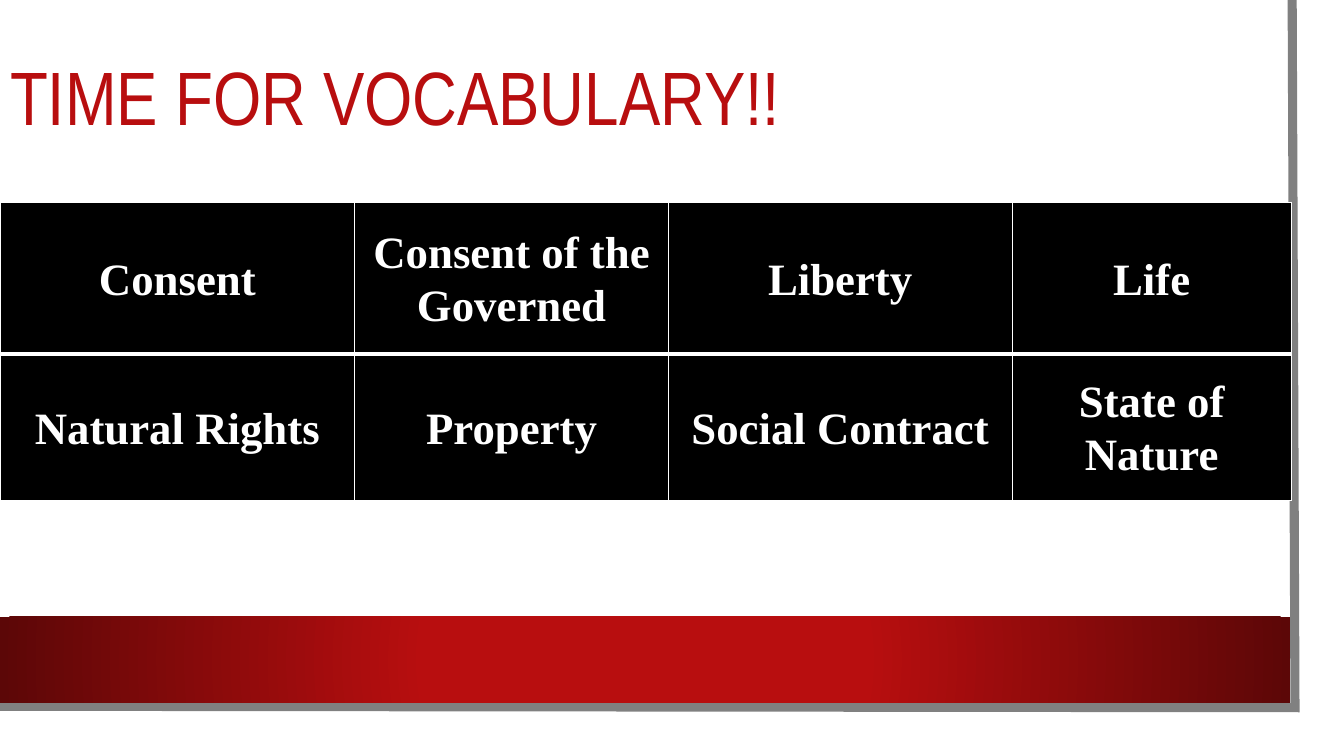
from dataclasses import dataclass
from itertools import product

from lxml import etree
from pptx import Presentation
from pptx import util as u
from pptx.dml import color
from pptx.enum import shapes, text
from pptx.oxml import ns, parse_xml

Pt = u.Pt


@dataclass(frozen=True)
class Theme:
    red: str = "B80E0F"
    dark_red: str = "5C0707"
    white: str = "FFFFFF"
    black: str = "000000"
    grey: str = "808080"
    title_font: str = "Arial Narrow"
    term_font: str = "Times New Roman"
    title_size: float = 54
    term_size: float = 32
    frame_width: float = 6.5
    rule: float = 1
    header_rule: float = 3


THEME = Theme()
TERMS = [
    ["Consent", "Consent of the Governed", "Liberty", "Life"],
    ["Natural Rights", "Property", "Social Contract", "State of Nature"],
]
COLUMN_WIDTHS = [253.5, 224, 245.5, 199.5]
ROW_HEIGHTS = [108.5, 104.5]


def rgb(value):
    return color.RGBColor.from_string(value)


def apply(target, formats):
    for name, value in formats.items():
        setattr(target, name, value)


def style_text(paragraph, ink, paragraph_formats, font_formats):
    apply(paragraph, paragraph_formats)
    apply(paragraph.font, font_formats)
    paragraph.font.color.rgb = rgb(ink)


def add_panel(slide, box):
    panel = slide.shapes.add_shape(shapes.MSO_SHAPE.RECTANGLE, *map(Pt, box))
    panel.shadow.inherit = False
    panel.line.fill.background()
    panel.fill.solid()
    panel.fill.fore_color.rgb = rgb(THEME.white)
    return panel


def add_frame(slide, box):
    left, top, width, height = box
    right, bottom = left + width, top + height
    builder = slide.shapes.build_freeform(Pt(right - 2), Pt(top))
    builder.add_line_segments(
        [(Pt(right), Pt(bottom)), (Pt(left), Pt(bottom - 1))], close=False
    )
    frame = builder.convert_to_shape()
    frame.shadow.inherit = False
    frame.fill.background()
    frame.line.color.rgb = rgb(THEME.grey)
    frame.line.width = Pt(THEME.frame_width)
    outline = frame.element.spPr.find(ns.qn("a:ln"))
    etree.SubElement(outline, ns.qn("a:miter"), lim="800000")


def add_ribbon(slide, box):
    ribbon = add_panel(slide, box)
    stops = "".join(
        f'<a:gs pos="{share * 1000}"><a:srgbClr val="{shade}"/></a:gs>'
        for share, shade in [(34, THEME.red), (100, THEME.dark_red)]
    )
    gradient = parse_xml(
        f'<a:gradFill {ns.nsdecls("a")} rotWithShape="1"><a:gsLst>{stops}</a:gsLst>'
        '<a:path path="circle"><a:fillToRect l="50000" t="50000" r="50000" b="50000"/>'
        "</a:path></a:gradFill>"
    )
    properties = ribbon.element.spPr
    properties.replace(properties.find(ns.qn("a:solidFill")), gradient)


def place_title(slide, box, words):
    title = slide.shapes.title
    apply(title, dict(zip(("left", "top", "width", "height"), map(Pt, box))))
    slide.shapes.element.append(title.element)
    frame = title.text_frame
    frame.text = words
    apply(frame, {
        "vertical_anchor": text.MSO_ANCHOR.MIDDLE,
        "word_wrap": True,
        "auto_size": text.MSO_AUTO_SIZE.NONE,
    })
    style_text(
        frame.paragraphs[0], THEME.red,
        {"alignment": text.PP_ALIGN.LEFT, "line_spacing": 0.9},
        {"name": THEME.title_font, "size": Pt(THEME.title_size), "bold": False},
    )


def add_borders(cell, widths):
    properties = cell._tc.get_or_add_tcPr()
    for position, (side, width) in enumerate(widths.items()):
        properties.insert(position, parse_xml(
            f'<a:{side} {ns.nsdecls("a")} w="{Pt(width)}"><a:solidFill>'
            f'<a:srgbClr val="{THEME.white}"/></a:solidFill></a:{side}>'
        ))


def add_vocabulary(slide, box):
    rows, columns = len(TERMS), len(TERMS[0])
    vocabulary = slide.shapes.add_table(rows, columns, *map(Pt, box)).table
    for column, width in zip(vocabulary.columns, COLUMN_WIDTHS):
        column.width = Pt(width)
    for row, height in zip(vocabulary.rows, ROW_HEIGHTS):
        row.height = Pt(height)
    for row, column in product(range(rows), range(columns)):
        cell = vocabulary.cell(row, column)
        cell.text = TERMS[row][column]
        apply(cell, {
            "vertical_anchor": text.MSO_ANCHOR.MIDDLE,
            "margin_left": Pt(5), "margin_right": Pt(5),
            "margin_top": 0, "margin_bottom": 0,
        })
        cell.fill.solid()
        cell.fill.fore_color.rgb = rgb(THEME.black)
        style_text(
            cell.text_frame.paragraphs[0], THEME.white,
            {"alignment": text.PP_ALIGN.CENTER, "line_spacing": 1.07},
            {"name": THEME.term_font, "size": Pt(THEME.term_size), "bold": True},
        )
        add_borders(cell, {
            "lnL": THEME.rule,
            "lnR": THEME.rule,
            "lnT": THEME.header_rule if row == 1 else THEME.rule,
            "lnB": THEME.header_rule if row == 0 else THEME.rule,
        })


def build_vocabulary_slide(deck):
    slide = deck.slides.add_slide(deck.slide_layouts[5])
    add_panel(slide, (0, 0, 943, 523.5))
    add_frame(slide, (-2, 0, 927, 505.5))
    add_ribbon(slide, (0, 440.5, 921.5, 61.5))
    place_title(slide, (0, 0, 872.5, 144.5), "TIME FOR VOCABULARY!!")
    add_vocabulary(slide, (0, 144.5, sum(COLUMN_WIDTHS), sum(ROW_HEIGHTS)))


def main():
    deck = Presentation()
    apply(deck, {"slide_width": Pt(960), "slide_height": Pt(540)})
    build_vocabulary_slide(deck)
    deck.save("out.pptx")


if __name__ == "__main__":
    main()
